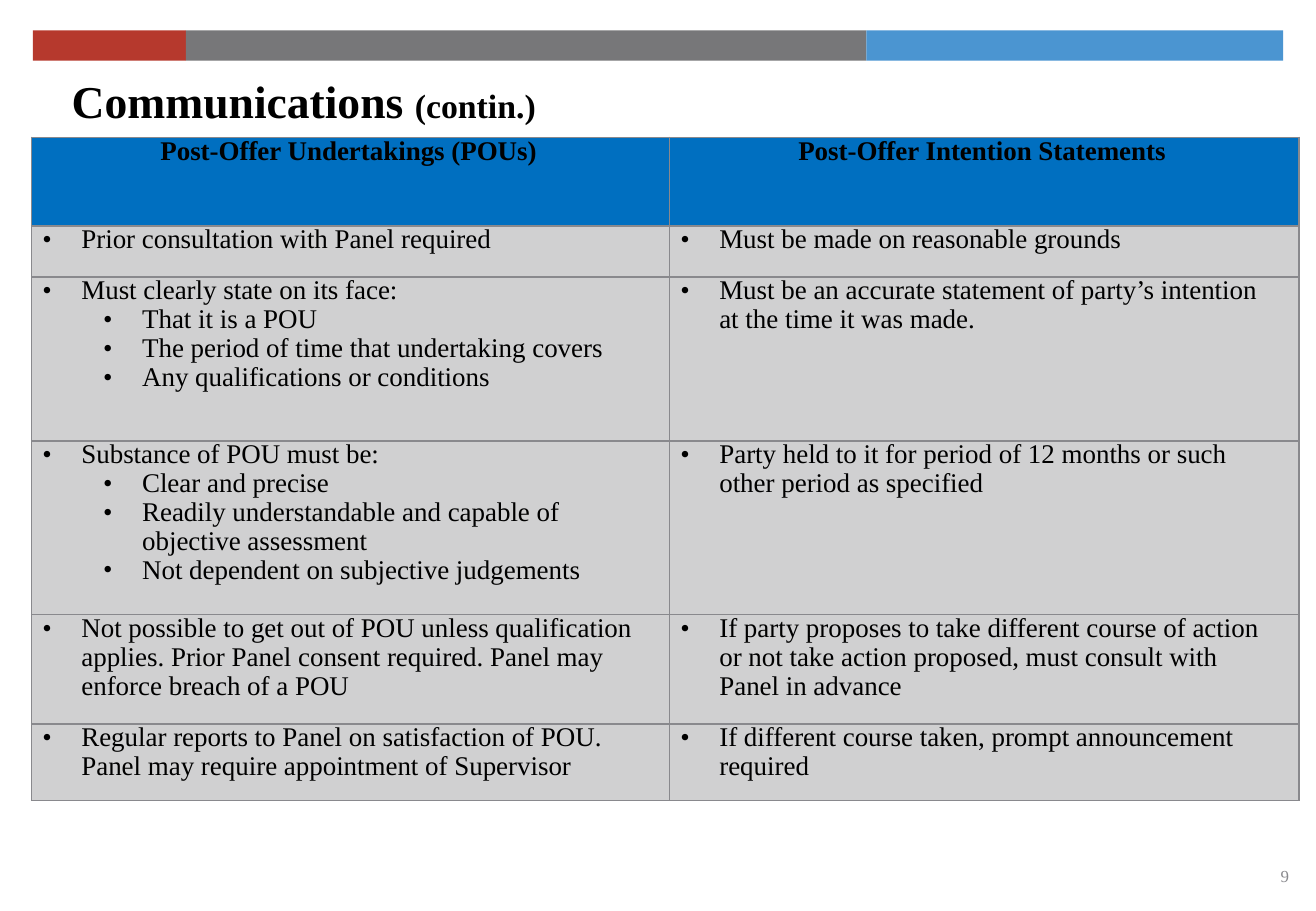
import pptx
import pptx.util
import pptx.dml.color
import pptx.enum.shapes
import pptx.enum.text
import pptx.oxml
import pptx.oxml.ns

Inches = pptx.util.Inches
Pt = pptx.util.Pt

FONT = "Times New Roman"
COLORS = {
    "red": "B6392D", "grey": "777779", "sky": "4B95D1", "header": "006FC0",
    "body": "D0D0D1", "rule": "89898D", "text": "000000",
}
TITLE = [("Communications ", 27), ("(contin.)", 20)]
PAGE = "9"
BARS = [("red", 1.26), ("grey", 5.6), ("sky", 3.43)]
COL_WIDTHS = [5.25, 5.18]
ROW_HEIGHTS = [0.73, 0.42, 1.35, 1.43, 0.9, 0.63]
HEADERS = ["Post-Offer Undertakings (POUs)", "Post-Offer Intention Statements"]
ROWS = [
    (["Prior consultation with Panel required"],
     ["Must be made on reasonable grounds"]),
    (["Must clearly state on its face:",
      "That it is a POU",
      "The period of time that undertaking covers",
      "Any qualifications or conditions"],
     ["Must be an accurate statement of party’s intention\vat the time it was made."]),
    (["Substance of POU must be:",
      "Clear and precise",
      "Readily understandable and capable of\vobjective assessment",
      "Not dependent on subjective judgements"],
     ["Party held to it for period of 12 months or such\vother period as specified"]),
    (["Not possible to get out of POU unless qualification\v"
      "applies. Prior Panel consent required. Panel may\venforce breach of a POU"],
     ["If party proposes to take different course of action\v"
      "or not take action proposed, must consult with\vPanel in advance"]),
    (["Regular reports to Panel on satisfaction of POU.\v"
      "Panel may require appointment of Supervisor"],
     ["If different course taken, prompt announcement\vrequired"]),
]


def rgb(name):
    return pptx.dml.color.RGBColor.from_string(COLORS[name])


def style(font, size, color="text", bold=False):
    font.name, font.size, font.bold = FONT, Pt(size), bold
    font.color.rgb = rgb(color)


def clear_margins(box):
    box.margin_left = box.margin_top = box.margin_right = box.margin_bottom = 0


def add_bullet(p, level):
    pPr = p._p.get_or_add_pPr()
    pPr.set("marL", str(Inches(0.41 + 0.5 * level)))
    pPr.set("indent", str(Inches(-0.32)))
    ns = pptx.oxml.ns.nsdecls("a")
    pPr.append(pptx.oxml.parse_xml(f'<a:buFont {ns} typeface="{FONT}"/>'))
    pPr.append(pptx.oxml.parse_xml(f'<a:buChar {ns} char="•"/>'))


def add_borders(cell):
    tcPr = cell._tc.get_or_add_tcPr()
    for side in ("lnL", "lnR", "lnT", "lnB"):
        tcPr.append(pptx.oxml.parse_xml(
            f'<a:{side} {pptx.oxml.ns.nsdecls("a")} w="{Pt(1)}"><a:solidFill>'
            f'<a:srgbClr val="{COLORS["rule"]}"/></a:solidFill></a:{side}>'))


def fill_cell(cell, lines, header):
    clear_margins(cell)
    add_borders(cell)
    cell.fill.solid()
    cell.fill.fore_color.rgb = rgb("header" if header else "body")
    if header:
        cell.margin_left = Inches(1.06)
    tf = cell.text_frame
    for i, line in enumerate(lines):
        p = tf.add_paragraph() if i else tf.paragraphs[0]
        p.text = line
        p.level = min(i, 1)
        p.line_spacing = 0.96
        if not header:
            add_bullet(p, p.level)
        for r in p.runs:
            style(r.font, 16, bold=header)


def main():
    prs = pptx.Presentation()
    prs.slide_width, prs.slide_height = Inches(10.83), Inches(7.5)
    s = prs.slides.add_slide(prs.slide_layouts[5])

    left = 0.27
    for color, width in BARS:
        sp = s.shapes.add_shape(pptx.enum.shapes.MSO_SHAPE.RECTANGLE,
                                Inches(left), Inches(0.25), Inches(width), Inches(0.25))
        sp.shadow.inherit = False
        sp.fill.solid()
        sp.fill.fore_color.rgb = rgb(color)
        sp.line.fill.background()
        left += width

    title = s.shapes.title
    title.left, title.top = Inches(0.59), Inches(0.59)
    title.width, title.height = Inches(3.85), Inches(0.46)
    tf = title.text_frame
    clear_margins(tf)
    tf.word_wrap = False
    tf.auto_size = pptx.enum.text.MSO_AUTO_SIZE.NONE
    tf.vertical_anchor = pptx.enum.text.MSO_ANCHOR.BOTTOM
    p = tf.paragraphs[0]
    p.alignment = pptx.enum.text.PP_ALIGN.LEFT
    for text, size in TITLE:
        r = p.add_run()
        r.text = text
        style(r.font, size, bold=True)

    table = s.shapes.add_table(
        len(ROW_HEIGHTS), len(COL_WIDTHS), Inches(0.26), Inches(1.13),
        Inches(sum(COL_WIDTHS)), Inches(sum(ROW_HEIGHTS))).table
    for column, width in zip(table.columns, COL_WIDTHS):
        column.width = Inches(width)
    for row, height in zip(table.rows, ROW_HEIGHTS):
        row.height = Inches(height)
    for i, row in enumerate([[[h] for h in HEADERS]] + ROWS):
        for j, lines in enumerate(row):
            fill_cell(table.cell(i, j), lines, header=i == 0)

    number = s.shapes.add_textbox(Inches(10.51), Inches(7.12), Inches(0.24), Inches(0.19))
    tf = number.text_frame
    clear_margins(tf)
    tf.word_wrap = True
    tf.margin_left, tf.margin_top = Inches(0.03), Inches(0.01)
    tf.text = PAGE
    style(tf.paragraphs[0].runs[0].font, 10, "rule")

    prs.save("out.pptx")


if __name__ == "__main__":
    main()
